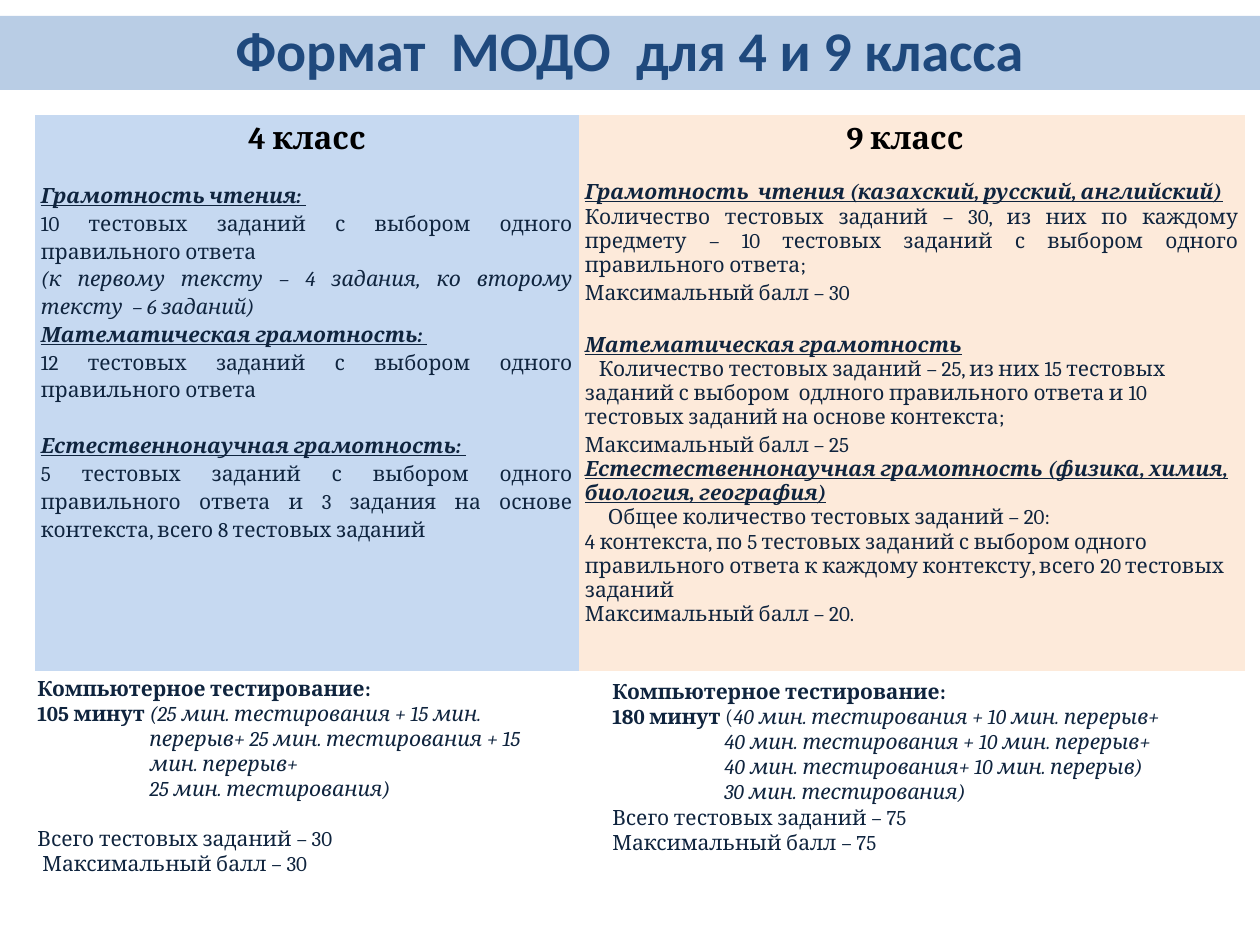
import pptx
import pptx.dml.color
import pptx.enum.shapes
import pptx.enum.text
import pptx.oxml.ns
import pptx.util

SCALE = 914400 / 126
HUES = {
    "band": "B9CDE5",
    "title": "1F497D",
    "blue": "C6D9F1",
    "peach": "FDEADA",
    "black": "000000",
    "navy": "0F243E",
}
PLAIN = "{2D5ABB26-0587-4C30-8999-92F81FD0307C}"
ALIGN = pptx.enum.text.PP_ALIGN
HEAD = {"bold": True, "slant": True, "line": True}
JUST = {"align": ALIGN.JUSTIFY}
LOOSE = {"align": ALIGN.JUSTIFY, "lead": 1.15}
TAIL = {"align": ALIGN.JUSTIFY, "after": 2}
HANG = 112


def px(num):
    return pptx.util.Emu(round(num * SCALE))


def hue(name):
    return pptx.dml.color.RGBColor.from_string(HUES[name])


def paint(item, name):
    item.fill.solid()
    item.fill.fore_color.rgb = hue(name)


def write(frame, text, size=12, font="Cambria", color="navy", bold=False,
          slant=False, line=False, align=ALIGN.LEFT, lead=None, before=0,
          after=0, left=0, first=0, join=False):
    para = frame.paragraphs[-1]
    if not join:
        if para.runs:
            para = frame.add_paragraph()
        para.alignment = align
        para.line_spacing = lead
        para.space_before = pptx.util.Pt(before)
        para.space_after = pptx.util.Pt(after)
        props = para._p.get_or_add_pPr()
        props.set("marL", str(px(left)))
        props.set("indent", str(px(first)))
    run = para.add_run()
    run.text = text
    run.font.size = pptx.util.Pt(size)
    run.font.name = font
    run.font.color.rgb = hue(color)
    run.font.bold = bold
    run.font.italic = slant
    run.font.underline = line


def title(slide, x, y, wide, high):
    kind = pptx.enum.shapes.MSO_SHAPE.RECTANGLE
    band = slide.shapes.add_shape(kind, px(x), px(y), px(wide), px(high))
    band.shadow.inherit = False
    paint(band, "band")
    band.line.fill.background()
    write(band.text_frame, "Формат  МОДО  для 4 и 9 класса", size=32,
          font="Calibri", color="title", bold=True, align=ALIGN.CENTER, lead=0.9)


def table(slide, x, y, wide, high):
    top, split = 66, 544
    shape = slide.shapes.add_table(2, 2, px(x), px(y), px(wide), px(high))
    shape.element.find(".//" + pptx.oxml.ns.qn("a:tableStyleId")).text = PLAIN
    grid = shape.table
    grid.first_row = grid.horz_banding = False
    for col, size in zip(grid.columns, (split, wide - split)):
        col.width = px(size)
    for row, size in zip(grid.rows, (top, high - top)):
        row.height = px(size)

    bodies = (
        [
            ("Грамотность чтения: ", HEAD | LOOSE),
            ("10 тестовых заданий с выбором одного правильного ответа ", LOOSE),
            ("(к первому тексту – 4 задания, ко второму тексту  – 6 заданий)",
             LOOSE | {"slant": True}),
            ("Математическая грамотность: ", HEAD | LOOSE),
            ("12 тестовых заданий с выбором одного правильного ответа", LOOSE),
            ("Естественнонаучная грамотность: ", HEAD | LOOSE | {"before": 16}),
            ("5 тестовых заданий с выбором одного правильного ответа и 3 задания "
             "на основе контекста, всего 8 тестовых заданий", LOOSE),
        ],
        [
            ("Грамотность  чтения (казахский, русский, английский)", HEAD),
            ("Количество тестовых заданий – 30, из них по каждому предмету – "
             "10 тестовых заданий с выбором одного правильного ответа;", TAIL),
            ("Максимальный балл – 30", TAIL),
            ("Математическая грамотность", HEAD | {"before": 14}),
            ("Количество тестовых заданий – 25, из них 15 тестовых заданий с "
             "выбором  одлного правильного ответа и 10 тестовых заданий на "
             "основе контекста;", {"first": 14}),
            ("Максимальный балл – 25", LOOSE),
            ("Естестественнонаучная грамотность (физика, химия, биология, "
             "география)", HEAD),
            ("Общее количество тестовых заданий – 20:", {"first": 23}),
            ("4 контекста, по 5 тестовых заданий с выбором одного правильного "
             "ответа к каждому контексту, всего 20 тестовых заданий", {}),
            ("Максимальный балл – 20.", {}),
        ],
    )
    heads = ("4 класс", "9 класс  ")
    for col, (head, body, fill) in enumerate(zip(heads, bodies, ("blue", "peach"))):
        cell = grid.cell(0, col)
        paint(cell, fill)
        write(cell.text_frame, head, size=18, color="black", bold=True,
              align=ALIGN.CENTER)
        cell = grid.cell(1, col)
        paint(cell, fill)
        cell.margin_left = cell.margin_right = px(6)
        cell.margin_top = cell.margin_bottom = 0
        for text, style in body:
            write(cell.text_frame, text, **style)


def notes(slide, x, y, wide, high, time, parts, ends):
    box = slide.shapes.add_textbox(px(x), px(y), px(wide), px(high))
    frame = box.text_frame
    frame.word_wrap = True
    frame.auto_size = pptx.enum.text.MSO_AUTO_SIZE.SHAPE_TO_FIT_TEXT
    write(frame, "Компьютерное тестирование:", bold=True)
    write(frame, time + " ", bold=True, left=HANG, first=-HANG)
    write(frame, "(", slant=len(parts) == 2, join=True)
    write(frame, parts[0], slant=True, join=True)
    for part in parts[1:]:
        write(frame, part, slant=True, left=HANG)
    for text, style in ends:
        write(frame, text, **style)


def main():
    deck = pptx.Presentation()
    deck.slide_width, deck.slide_height = px(1260), px(945)
    slide = deck.slides.add_slide(deck.slide_layouts[6])
    table(slide, 35, 115, 1210, 556)
    notes(slide, 25, 669, 546, 240, "105 минут",
          ["25 мин. тестирования + 15 мин. перерыв+ 25 мин. тестирования + "
           "15 мин. перерыв+", "25 мин. тестирования)"],
          [("Всего тестовых заданий – 30", {"before": 14}),
           ("Максимальный балл – 30", {"first": 5})])
    notes(slide, 600, 672, 615, 190, "180 минут",
          ["40 мин. тестирования + 10 мин. перерыв+",
           "40 мин. тестирования + 10 мин. перерыв+",
           "40 мин. тестирования+ 10 мин. перерыв)",
           "30 мин. тестирования)"],
          [("Всего тестовых заданий – 75", {}),
           ("Максимальный балл – 75", {})])
    title(slide, 0, 16, 1260, 74)
    deck.save("out.pptx")


if __name__ == "__main__":
    main()
